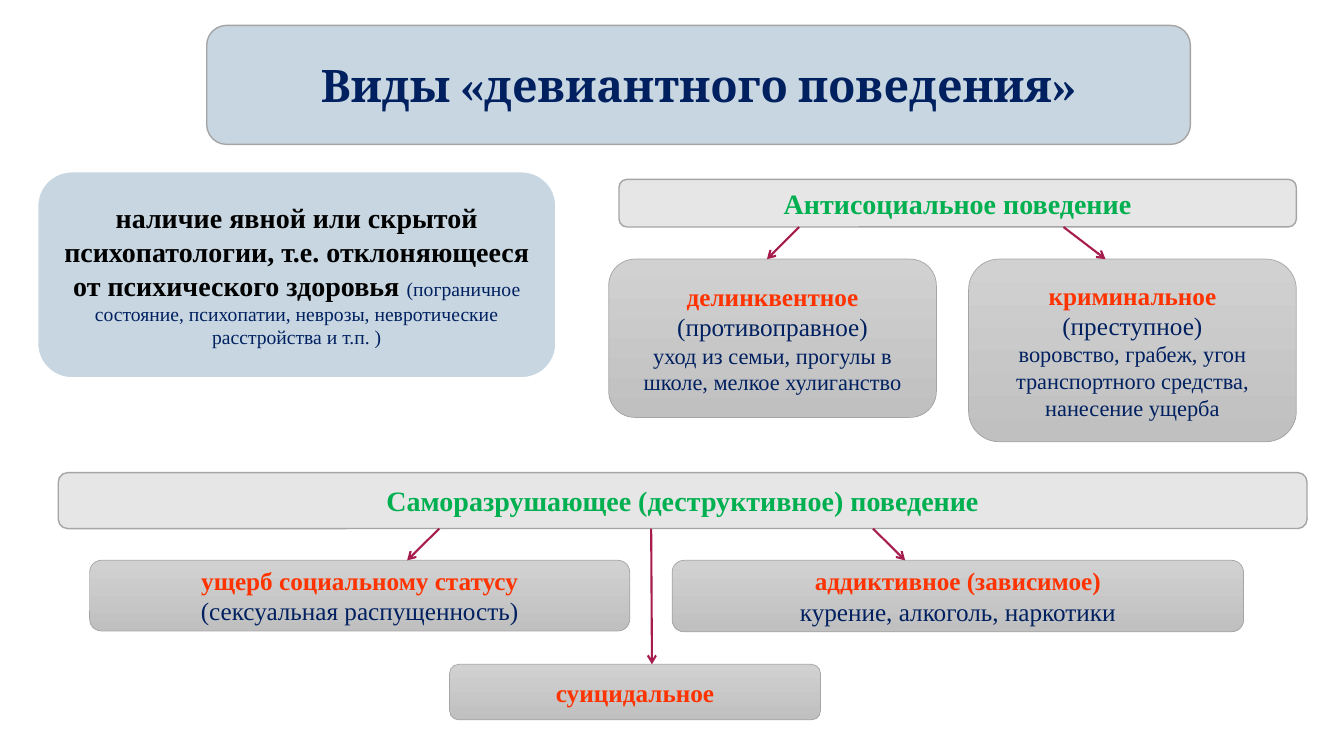
import pptx
import pptx.dml.color
import pptx.enum.shapes
import pptx.enum.text
import pptx.oxml
import pptx.oxml.ns
import pptx.util
from pptx.util import Cm

NAVY, GREEN, RED, BLACK = "002060", "00B050", "FF3300", "000000"
PALE_BLUE, PALE_GREY, EDGE, CRIMSON = "C7D6E0", "E7E6E6", "A5A5A5", "A61D4D"
SILVER = ("D1D1D1", "C0C0C0")


def color(hex_code):
    return pptx.dml.color.RGBColor.from_string(hex_code)


def text(words, size=18, ink=NAVY, bold=False, font="Times New Roman"):
    """Describe one run of text."""
    return {"words": words, "size": size, "ink": ink, "bold": bold, "font": font}


def kind_name(words):
    return text(words, ink=RED, bold=True)


class Diagram:
    def __init__(self, slide, edge=EDGE, arrow_color=CRIMSON):
        self.slide = slide
        self.edge = edge
        self.arrow_color = arrow_color

    def box(self, left, top, width, height, paragraphs, fill, line=None, weight=1):
        """Rounded box; a pair of fill colours gives a vertical gradient."""
        panel = self.slide.shapes.add_shape(
            pptx.enum.shapes.MSO_SHAPE.ROUNDED_RECTANGLE,
            Cm(left), Cm(top), Cm(width), Cm(height))
        panel.shadow.inherit = False
        if isinstance(fill, tuple):
            panel.fill.gradient()
            panel.fill.gradient_angle = 270
            for stop, shade in zip(panel.fill.gradient_stops, fill):
                stop.color.rgb = color(shade)
        else:
            panel.fill.solid()
            panel.fill.fore_color.rgb = color(fill)
        panel.line.color.rgb = color(line or self.edge)
        panel.line.width = pptx.util.Pt(weight)
        self.set_text(panel.text_frame, paragraphs)

    def set_text(self, frame, paragraphs):
        frame.word_wrap = True
        frame.vertical_anchor = pptx.enum.text.MSO_ANCHOR.MIDDLE
        for index, runs in enumerate(paragraphs):
            paragraph = frame.add_paragraph() if index else frame.paragraphs[0]
            paragraph.alignment = pptx.enum.text.PP_ALIGN.CENTER
            for style in runs:
                run = paragraph.add_run()
                run.text = style["words"]
                run.font.size = pptx.util.Pt(style["size"])
                run.font.name = style["font"]
                run.font.bold = style["bold"]
                run.font.color.rgb = color(style["ink"])

    def heading(self, left, top, width, height, words):
        self.box(left, top, width, height,
                 [[text(words, size=20, ink=GREEN, bold=True)]], PALE_GREY)

    def kind(self, left, top, width, height, paragraphs):
        self.box(left, top, width, height, paragraphs, SILVER, weight=0.5)

    def arrow(self, x1, y1, x2, y2):
        link = self.slide.shapes.add_connector(
            pptx.enum.shapes.MSO_CONNECTOR.STRAIGHT, Cm(x1), Cm(y1), Cm(x2), Cm(y2))
        link.line.color.rgb = color(self.arrow_color)
        link.line.width = pptx.util.Pt(1.5)
        namespace = pptx.oxml.ns.nsdecls("a")
        properties = link._element.spPr
        properties.get_or_add_ln().append(
            pptx.oxml.parse_xml(f'<a:tailEnd {namespace} type="arrow"/>'))
        properties.append(pptx.oxml.parse_xml(f"<a:effectLst {namespace}/>"))


def main():
    deck = pptx.Presentation()
    deck.slide_width, deck.slide_height = Cm(33.87), Cm(19.05)
    diagram = Diagram(deck.slides.add_slide(deck.slide_layouts[6]))

    # Title
    diagram.box(5.21, 0.64, 24.79, 3, [[text(
        "Виды «девиантного поведения»", size=32, bold=True, font="Cambria")]], PALE_BLUE)

    # Psychopathology
    diagram.box(0.94, 4.32, 13.08, 5.21, [[
        text("наличие явной или скрытой психопатологии, т.е. отклоняющееся "
             "от психического здоровья ", size=20, ink=BLACK, bold=True),
        text("(пограничное состояние, психопатии, неврозы, невротические "
             "расстройства и т.п. )", size=14),
    ]], PALE_BLUE, line="FFFFFF", weight=1.5)

    # Antisocial behaviour
    antisocial_bottom, antisocial_kinds = 5.72, 6.53
    diagram.heading(15.6, 4.52, 17.07, 1.2, "Антисоциальное поведение")
    diagram.kind(15.34, antisocial_kinds, 8.26, 3.99, [
        [kind_name("делинквентное")],
        [text("(противоправное)")],
        [text("уход из семьи, прогулы в школе, мелкое хулиганство", size=16)]])
    diagram.kind(24.41, antisocial_kinds, 8.26, 4.6, [
        [kind_name("криминальное "), text("(преступное)")],
        [text("воровство, грабеж, угон транспортного средства, "
              "нанесение ущерба", size=16)]])
    for start, end in ((20.14, 19.33), (26.8, 27.86)):
        diagram.arrow(start, antisocial_bottom, end, antisocial_kinds)

    # Self-destructive behaviour
    destructive_bottom, destructive_kinds, suicidal_top = 13.32, 14.12, 16.74
    diagram.heading(1.47, 11.91, 31.47, 1.41, "Саморазрушающее (деструктивное) поведение")
    diagram.kind(11.33, suicidal_top, 9.35, 1.4, [[kind_name("суицидальное")]])
    diagram.kind(2.26, destructive_kinds, 13.61, 1.78, [
        [kind_name("ущерб социальному статусу")],
        [text("(сексуальная распущенность)")]])
    diagram.kind(16.94, destructive_kinds, 14.4, 1.8, [
        [kind_name("аддиктивное (зависимое)")],
        [text("курение, алкоголь, наркотики")]])
    for start, end, tip in ((11.07, 10.26, destructive_kinds),
                            (22, 22.81, destructive_kinds),
                            (16.41, 16.43, suicidal_top)):
        diagram.arrow(start, destructive_bottom, end, tip)

    deck.save("out.pptx")


if __name__ == "__main__":
    main()
